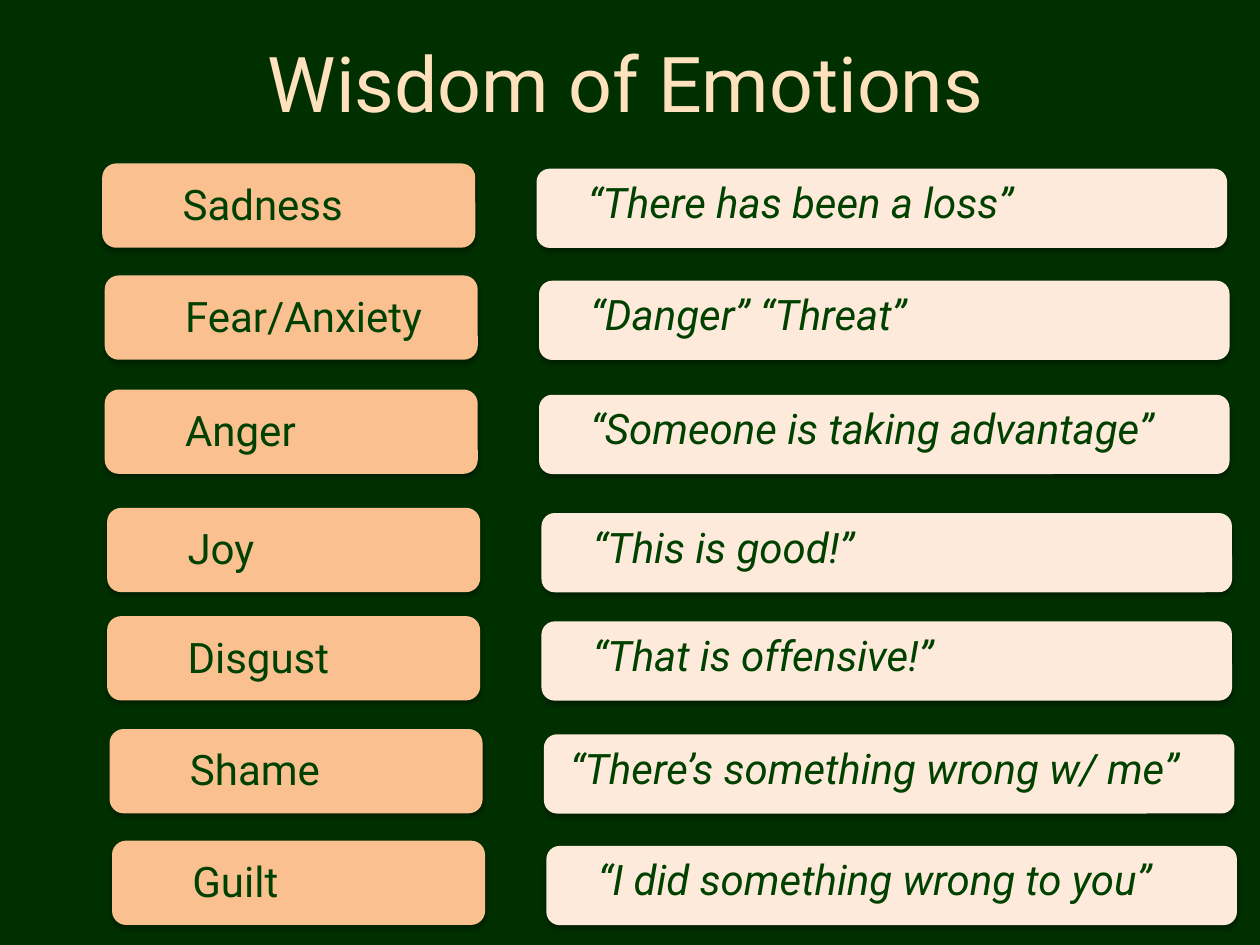
"""Build the slide that pairs each emotion with its message."""
from lxml import etree
from pptx import Presentation
from pptx.dml.color import RGBColor
from pptx.enum.shapes import MSO_SHAPE
from pptx.enum.text import MSO_ANCHOR, MSO_AUTO_SIZE, PP_ALIGN
from pptx.oxml.ns import qn
from pptx.util import Pt

ROUND = MSO_SHAPE.ROUNDED_RECTANGLE
MIDDLE = MSO_ANCHOR.MIDDLE
GROW = MSO_AUTO_SIZE.SHAPE_TO_FIT_TEXT
CENTER = PP_ALIGN.CENTER

FONT = "Roboto"
NIGHT = RGBColor(0x00, 0x30, 0x00)
GREEN = RGBColor(0x00, 0x41, 0x00)
CREAM = RGBColor(0xFF, 0xE1, 0xBD)
PEACH = RGBColor(0xFA, 0xC0, 0x90)
PALE = RGBColor(0xFD, 0xEA, 0xDA)

TITLE = "Wisdom of Emotions"
INDENT = 22.3
ROWS = [
    ("Sadness", "“There has been a loss”", 58.4, 93.4, INDENT),
    ("Fear/Anxiety", "“Danger” “Threat”", 59.8, 157.4, INDENT),
    ("Anger", "“Someone is taking advantage”", 59.8, 222.6, INDENT),
    ("Joy", "“This is good!”", 61.2, 290.2, INDENT),
    ("Disgust", "“That is offensive!”", 61.2, 352.1, INDENT),
    ("Shame", "“There’s something wrong w/ me”", 62.6, 416.6, 7.9),
    ("Guilt", "“I did something wrong to you”", 64, 480.4, INDENT),
]


def add_card(shapes, left, top, width, height, color):
    card = shapes.add_shape(ROUND, Pt(left), Pt(top), Pt(width), Pt(height))
    card.fill.solid()
    card.fill.fore_color.rgb = color
    card.line.fill.background()
    card.shadow.inherit = False
    effects = card._element.spPr.find(qn("a:effectLst"))
    shade = etree.SubElement(
        effects, qn("a:outerShdw"), blurRad=str(Pt(3.1)), dist=str(Pt(1.8)),
        dir="5400000", rotWithShape="0")
    black = etree.SubElement(shade, qn("a:srgbClr"), val="000000")
    etree.SubElement(black, qn("a:alpha"), val="35000")


def add_text(shapes, text, left, top, width, height, size=24, color=GREEN,
             italic=False):
    box = shapes.add_textbox(Pt(left), Pt(top), Pt(width), Pt(height))
    frame = box.text_frame
    frame.word_wrap = True
    frame.text = text
    font = frame.paragraphs[0].runs[0].font
    font.name = FONT
    font.size = Pt(size)
    font.color.rgb = color
    font.italic = italic
    return frame


def main():
    deck = Presentation()
    deck.slide_width, deck.slide_height = Pt(720), Pt(540)
    slide = deck.slides.add_slide(deck.slide_layouts[6])
    slide.background.fill.solid()
    slide.background.fill.fore_color.rgb = NIGHT
    shapes = slide.shapes

    title = add_text(shapes, TITLE, 5, 1.4, 705.6, 90, 44, CREAM)
    title.vertical_anchor = MIDDLE
    title.paragraphs[0].alignment = CENTER

    for name, quote, left, top, indent in ROWS:
        add_card(shapes, left, top, 213.2, 48.2, PEACH)
        label = add_text(shapes, name, left + 38.9, top + 5, 165.6, 36.4)
        label.auto_size = GROW
        pair = shapes.add_group_shape().shapes
        right = left + 248.2
        add_card(pair, right, top + 3, 394.6, 45.3, PALE)
        words = add_text(pair, quote, right + indent, top + 4, 394.6, 36.4,
                         italic=True)
        words.auto_size = GROW

    deck.save("out.pptx")


if __name__ == "__main__":
    main()
